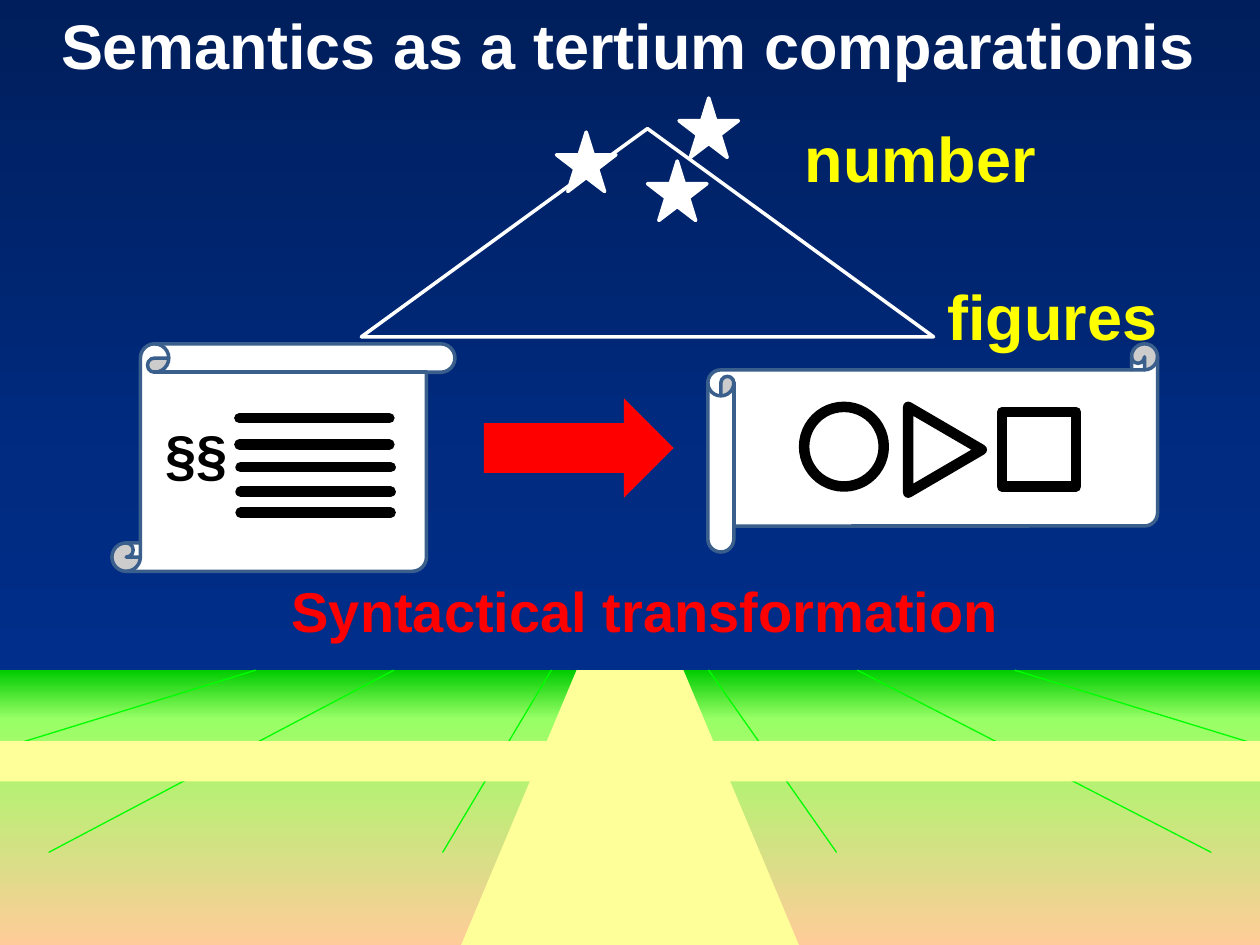
from copy import deepcopy

from pptx import Presentation
from pptx.dml.color import RGBColor
from pptx.enum.shapes import MSO_CONNECTOR, MSO_SHAPE as SHAPE
from pptx.enum.text import MSO_AUTO_SIZE, PP_ALIGN
from pptx.oxml.ns import qn
from pptx.oxml.xmlchemy import OxmlElement
from pptx.util import Pt

WHITE = RGBColor(0xFF, 0xFF, 0xFF)
BLACK = RGBColor(0x00, 0x00, 0x00)
RED = RGBColor(0xFF, 0x00, 0x00)
YELLOW = RGBColor(0xFF, 0xFF, 0x00)
SAND = RGBColor(0xFF, 0xFF, 0x99)
SCROLL_EDGE = RGBColor(0x3A, 0x5F, 0x8C)
FURROW_GREEN = RGBColor(0x00, 0xFF, 0x00)
GRASS_DARK = RGBColor(0x00, 0xCC, 0x00)
GRASS_LIGHT = RGBColor(0x99, 0xFF, 0x66)
SOIL = RGBColor(0xFF, 0xCC, 0x99)
SKY_TOP = RGBColor(0x00, 0x1E, 0x5B)
SKY_MIDDLE = RGBColor(0x00, 0x2B, 0x81)
SKY_BOTTOM = RGBColor(0x00, 0x33, 0x99)

prs = Presentation()
prs.slide_width, prs.slide_height = Pt(720), Pt(540)
slide = prs.slides.add_slide(prs.slide_layouts[6])


def add_figure(kind, left, top, width, height, fills=(), edge=None, weight=2):
    figure = slide.shapes.add_shape(kind, Pt(left), Pt(top), Pt(width), Pt(height))
    figure.shadow.inherit = False
    if not fills:
        figure.fill.background()
    elif len(fills) == 1:
        figure.fill.solid()
        figure.fill.fore_color.rgb = fills[0]
    else:
        figure.fill.gradient()
        figure.fill.gradient_angle = 270
        stop_list = figure.element.find(".//" + qn("a:gsLst"))
        for _ in fills[2:]:
            stop_list.append(deepcopy(stop_list[0]))
        for i, (stop, color) in enumerate(zip(figure.fill.gradient_stops, fills)):
            stop.position = i / (len(fills) - 1)
            stop.color.rgb = color
    if edge is None:
        figure.line.fill.background()
    else:
        figure.line.color.rgb = edge
        figure.line.width = Pt(weight)
    return figure


def add_label(text, left, top, width, height, size, color):
    label = slide.shapes.add_textbox(Pt(left), Pt(top), Pt(width), Pt(height))
    frame = label.text_frame
    frame.word_wrap = True
    frame.auto_size = MSO_AUTO_SIZE.SHAPE_TO_FIT_TEXT
    frame.text = text
    paragraph = frame.paragraphs[0]
    paragraph.alignment = PP_ALIGN.CENTER
    font = paragraph.runs[0].font
    font.name, font.size, font.bold = "Arial", Pt(size), True
    font.color.rgb = color


add_figure(SHAPE.RECTANGLE, 0, -2, 720, 542, (SKY_TOP, SKY_MIDDLE, SKY_BOTTOM))
add_label("Semantics as a tertium comparationis", -1, 0, 720, 51, 36, WHITE)
add_figure(SHAPE.RECTANGLE, 0, 411, 720, 129, (GRASS_LIGHT, SOIL))
add_figure(SHAPE.RECTANGLE, 0, 383, 720, 28, (GRASS_DARK, GRASS_LIGHT))

furrows = [
    (x1, 383, x2, y2, FURROW_GREEN, 0.75)
    for x1, x2, y2 in [
        (405, 478, 487), (580, 720, 426), (490, 692, 487),
        (315, 253, 487), (225, 28, 487), (146, 0, 428),
    ]
]
text_rows = [
    (x, y, x + 85.7, y, BLACK, 6)
    for x, y in [(136.8, 239), (136.8, 254), (137.5, 267), (137.5, 281), (137.5, 293)]
]
for strokes in (furrows, text_rows):
    for x1, y1, x2, y2, color, weight in strokes:
        stroke = slide.shapes.add_connector(
            MSO_CONNECTOR.STRAIGHT, Pt(x1), Pt(y1), Pt(x2), Pt(y2))
        stroke.line.color.rgb = color
        stroke.line.width = Pt(weight)
        stroke.element.spPr.append(OxmlElement("a:effectLst"))
    if strokes is furrows:
        road = add_figure(SHAPE.TRAPEZOID, 263.5, 383, 193, 157, (SAND,))
        road.adjustments[0] = 0.42
        add_figure(SHAPE.RECTANGLE, 0, 423.5, 720, 23, (SAND,))
        add_figure(SHAPE.VERTICAL_SCROLL, 64, 196.5, 196, 130, (WHITE,), SCROLL_EDGE)
        add_figure(SHAPE.HORIZONTAL_SCROLL, 404.5, 196.5, 257, 119, (WHITE,), SCROLL_EDGE)
        add_figure(SHAPE.RIGHT_ARROW, 276.5, 227.5, 108.5, 57, (RED,))
        add_label("Syntactical transformation", 76.5, 326, 584.5, 46, 32, RED)

add_figure(SHAPE.OVAL, 459.5, 232.5, 45.5, 45.5, edge=BLACK, weight=6)
pointer = add_figure(SHAPE.ISOSCELES_TRIANGLE, 515.5, 236, 49, 42, edge=BLACK, weight=6)
pointer.rotation = 90
add_figure(SHAPE.RECTANGLE, 572.5, 235.5, 42.5, 42.5, edge=BLACK, weight=6)
add_label("§§", 76.5, 236, 72, 46, 32, BLACK)

for left, top in [(318, 75.5), (388, 56), (370, 92)]:
    add_figure(SHAPE.STAR_5_POINT, left, top, 34, 34, (WHITE,), WHITE)
add_figure(SHAPE.ISOSCELES_TRIANGLE, 206.5, 73.5, 327, 119, edge=WHITE)
add_label("number", 422, 65, 208, 51, 36, YELLOW)
add_label("figures", 497.5, 155, 208, 51, 36, YELLOW)

for outline in slide.shapes.element.iter(qn("a:ln")):
    outline.set("cap", "rnd")
    outline.append(OxmlElement("a:round"))

prs.save("out.pptx")
